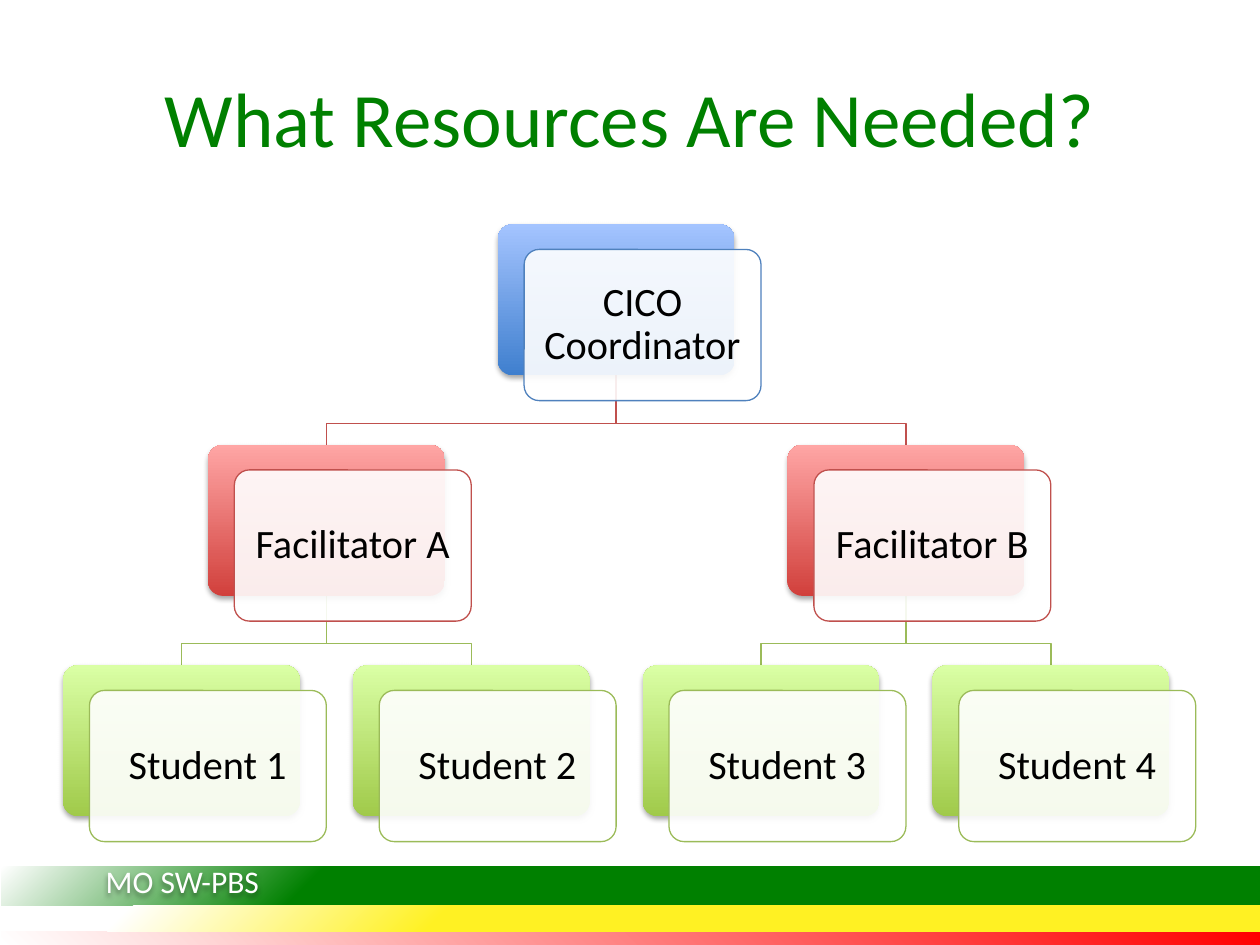
from lxml.etree import SubElement
from pptx import Presentation
from pptx.dml.color import RGBColor
from pptx.enum.shapes import MSO_SHAPE as Preset
from pptx.enum.text import MSO_ANCHOR as Anchor, PP_ALIGN as Align
from pptx.oxml import parse_xml
from pptx.oxml.ns import nsdecls, qn
from pptx.util import Inches, Pt

COLORS = {
    "title": "008000", "text": "000000", "white": "FFFFFF",
    "green": "008000", "yellow": "FFF123", "red": "FF0000",
}
# Per level of the chart: outline, bottom and top of the gradient
LEVELS = [
    ("4F81BD", "3F7FCE", "A4C4FF"),
    ("C0504D", "D1403C", "FFA6A5"),
    ("9BBB59", "A0CA4A", "DAFFA5"),
]
# Name, column, level, column of the parent
STAFF = [
    ("CICO Coordinator", 1.5, 0, None),
    ("Facilitator A", 0.5, 1, 1.5),
    ("Student 1", 0, 2, 0.5),
    ("Student 2", 1, 2, 0.5),
    ("Facilitator B", 2.5, 1, 1.5),
    ("Student 3", 2, 2, 2.5),
    ("Student 4", 3, 2, 2.5),
]
# Top, height, gradient stops, focus corner
BANDS = [
    (7.39, 0.12, [(0, "red"), (100, "white")], {"l": 100, "b": 100}),
    (6.88, 0.31, [(75, "green"), (100, "white")], {"l": 100, "t": 100}),
    (7.19, 0.2, [(65, "yellow"), (90, "white")], {"l": 100, "t": 100}),
]
LINEAR_UP = '<a:lin ang="16200000" scaled="0"/>'


class ChartPage:
    """Draws an organisation chart on a grid of columns and levels."""

    left, top = 0.5, 1.78
    column, level = 2.3, 1.75
    card_width, card_height = 1.88, 1.2
    offset = 0.2
    bend = 0.17
    font = "Calibri"

    def __init__(self, page):
        self.page = page

    def corner(self, column, level):
        return self.left + column * self.column, self.top + level * self.level

    def shape(self, preset, x, y, width, height):
        box = self.page.shapes.add_shape(
            preset, Inches(x), Inches(y), Inches(width), Inches(height))
        box.shadow.inherit = False
        box.line.fill.background()
        if preset == Preset.ROUNDED_RECTANGLE:
            box.adjustments[0] = 0.1
        return box

    def gradient(self, box, stops, direction):
        box.fill.solid()
        marks = "".join(
            f'<a:gs pos="{at * 1000}"><a:srgbClr val="{color}"/></a:gs>'
            for at, color in stops)
        solid = box._element.spPr.find(qn("a:solidFill"))
        solid.getparent().replace(solid, parse_xml(
            f'<a:gradFill {nsdecls("a")} rotWithShape="1">'
            f"<a:gsLst>{marks}</a:gsLst>{direction}</a:gradFill>"))

    def drop_shadow(self, box):
        box.shadow.inherit = False
        effects = box._element.spPr.find(qn("a:effectLst"))
        effects.append(parse_xml(
            f'<a:outerShdw {nsdecls("a")} blurRad="{Pt(3.1)}" dist="{Pt(1.8)}"'
            ' dir="5400000" rotWithShape="0"><a:srgbClr val="000000">'
            '<a:alpha val="35000"/></a:srgbClr></a:outerShdw>'))

    def set_text(self, box, text, size, color, align=Align.CENTER, anchor=Anchor.MIDDLE):
        frame = box.text_frame
        frame.word_wrap = True
        frame.vertical_anchor = anchor
        frame.text = text
        para = frame.paragraphs[0]
        para.alignment = align
        font = para.runs[0].font
        font.name, font.size = self.font, Pt(size)
        font.color.rgb = RGBColor.from_string(COLORS[color])
        return para

    def text(self, text, x, y, width, height, *style):
        box = self.page.shapes.add_textbox(
            Inches(x), Inches(y), Inches(width), Inches(height))
        self.set_text(box, text, *style)
        return box

    def link(self, parent, column, level):
        """Bent line from the parent's lower edge to the child's upper edge."""
        half = self.card_width / 2
        start_x, start_y = self.corner(parent, level - 1)
        end_x, end_y = self.corner(column, level)
        bend_y = end_y - self.bend
        points = [(start_x, start_y + self.card_height), (start_x, bend_y),
                  (end_x, bend_y), (end_x, end_y)]
        points = [(Inches(x + half), Inches(y)) for x, y in points]
        builder = self.page.shapes.build_freeform(*points[0])
        builder.add_line_segments(points[1:], close=False)
        line = builder.convert_to_shape()
        line.shadow.inherit = False
        line.fill.background()
        self.outline(line, LEVELS[level][0])

    def outline(self, box, color):
        box.line.color.rgb = RGBColor.from_string(color)
        box.line.width = Pt(0.75)

    def card(self, name, column, level):
        edge, bottom, top = LEVELS[level]
        x, y = self.corner(column, level)
        size = self.card_width, self.card_height
        back = self.shape(Preset.ROUNDED_RECTANGLE, x, y, *size)
        self.gradient(back, [(0, bottom), (100, top)], LINEAR_UP)
        self.drop_shadow(back)

        front = self.shape(
            Preset.ROUNDED_RECTANGLE, x + self.offset + 0.01, y + self.offset, *size)
        front.fill.solid()
        front.fill.fore_color.rgb = RGBColor.from_string(COLORS["white"])
        color = front._element.spPr.find(qn("a:solidFill"))[0]
        SubElement(color, qn("a:alpha"), val="90000")
        self.outline(front, edge)
        self.set_text(front, name, 23, "text").line_spacing = 0.9
        frame = front.text_frame
        frame.margin_left = frame.margin_right = Inches(0.1)
        frame.margin_top = frame.margin_bottom = Inches(0.1)

    def band(self, y, height, stops, focus):
        box = self.shape(Preset.RECTANGLE, 0.01, y, 10, height)
        sides = " ".join(f'{side}="{share * 1000}"' for side, share in focus.items())
        self.gradient(box, [(at, COLORS[name]) for at, name in stops],
                      f'<a:path path="circle"><a:fillToRect {sides}/></a:path>')


def main():
    deck = Presentation()
    deck.slide_width, deck.slide_height = Inches(10), Inches(7.5)
    chart = ChartPage(deck.slides.add_slide(deck.slide_layouts[6]))

    chart.text("What Resources Are Needed?", 0.5, 0.3, 9, 1.25, 44, "title")
    for _, column, level, parent in reversed(STAFF):
        if parent is not None:
            chart.link(parent, column, level)
    for name, column, level, _ in STAFF:
        chart.card(name, column, level)
    for band in BANDS:
        chart.band(*band)
    label = chart.text("MO SW-PBS", 0.74, 6.79, 1.92, 0.4,
                       18, "white", Align.LEFT, Anchor.TOP)
    chart.drop_shadow(label)
    deck.save("out.pptx")


if __name__ == "__main__":
    main()
